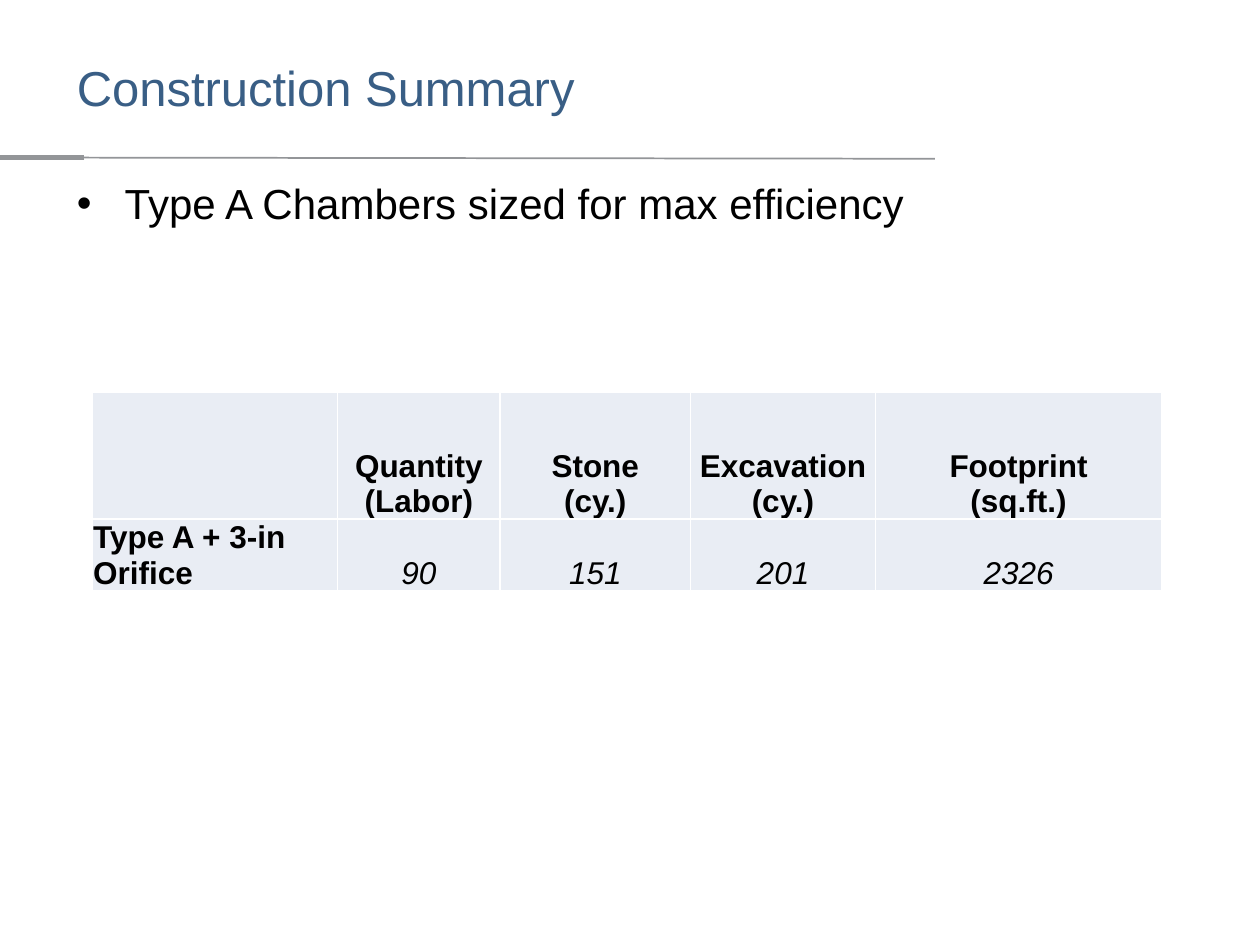
from dataclasses import dataclass

from lxml import etree
from pptx import Presentation
from pptx.dml.color import RGBColor
from pptx.enum.shapes import MSO_CONNECTOR
from pptx.enum.text import MSO_ANCHOR, MSO_AUTO_SIZE, PP_ALIGN
from pptx.oxml.ns import qn
from pptx.util import Inches, Pt

STRAIGHT = MSO_CONNECTOR.STRAIGHT
MIDDLE, BOTTOM = MSO_ANCHOR.MIDDLE, MSO_ANCHOR.BOTTOM
LEFT, CENTER = PP_ALIGN.LEFT, PP_ALIGN.CENTER
NO_AUTOFIT = MSO_AUTO_SIZE.NONE


@dataclass(frozen=True)
class Theme:
    font: str = "Arial"
    title_color: str = "395E85"
    text_color: str = "000000"
    rule_color: str = "939598"
    cell_fill: str = "E9EDF4"
    border_color: str = "FFFFFF"
    title_size: int = 28
    body_size: int = 24
    table_size: int = 18


THEME = Theme()

CHAMBER = "Type A"
COLUMN_WIDTHS = [1.95, 1.29, 1.51, 1.47, 2.27]
ROW_HEIGHTS = [1.01, 0.54]
# Each cell is a list of paragraphs
TABLE_ROWS = [
    [[], ["Quantity", "(Labor)"], ["Stone", "(cy.)"], ["Excavation (cy.)"],
     ["Footprint", "(sq.ft.)"]],
    [[f"{CHAMBER} + 3-in Orifice"], ["90"], ["151"], ["201"], ["2326"]],
]


def add_run(paragraph, text, size, color, bold=False, italic=False):
    run = paragraph.add_run()
    run.text = text
    font = run.font
    font.name, font.size = THEME.font, Pt(size)
    font.bold, font.italic = bold, italic
    font.color.rgb = RGBColor.from_string(color)


def place(shape, left, top, width, height):
    shape.left, shape.top = Inches(left), Inches(top)
    shape.width, shape.height = Inches(width), Inches(height)


def add_rule(slide, left, top, width, drop, weight):
    """Draw a rule from its right end back to the left edge."""
    rule = slide.shapes.add_connector(
        STRAIGHT, Inches(left + width), Inches(top + drop), Inches(left), Inches(top))
    rule.line.color.rgb = RGBColor.from_string(THEME.rule_color)
    rule.line.width = Pt(weight)
    etree.SubElement(rule._element.spPr, qn("a:effectLst"))


def fill_title(slide, left, top, width, height):
    title = slide.shapes.title
    place(title, left, top, width, height)
    frame = title.text_frame
    frame.auto_size, frame.vertical_anchor = NO_AUTOFIT, MIDDLE
    paragraph = frame.paragraphs[0]
    paragraph.alignment = LEFT
    add_run(paragraph, "Construction Summary", THEME.title_size, THEME.title_color)


def fill_body(slide, left, top, width, height):
    body = slide.placeholders[1]
    place(body, left, top, width, height)
    body.text_frame.auto_size = NO_AUTOFIT
    paragraph = body.text_frame.paragraphs[0]
    paragraph.space_before = Pt(0)
    properties = paragraph._p.get_or_add_pPr()
    properties.set("marL", str(Inches(0.38)))
    properties.set("indent", str(Inches(-0.38)))
    etree.SubElement(properties, qn("a:buFont"), typeface=THEME.font)
    etree.SubElement(properties, qn("a:buChar"), char="•")
    add_run(paragraph, f"{CHAMBER} Chambers sized for max efficiency",
            THEME.body_size, THEME.text_color)


def style_cell(cell):
    properties = cell._tc.get_or_add_tcPr()
    for side in ("lnL", "lnR", "lnT", "lnB"):
        border = etree.SubElement(properties, qn(f"a:{side}"), w=str(Pt(1)))
        border_fill = etree.SubElement(border, qn("a:solidFill"))
        etree.SubElement(border_fill, qn("a:srgbClr"), val=THEME.border_color)
    cell.fill.solid()
    cell.fill.fore_color.rgb = RGBColor.from_string(THEME.cell_fill)
    cell.vertical_anchor = BOTTOM
    cell.margin_left = cell.margin_right = cell.margin_top = Inches(0.01)
    cell.margin_bottom = 0


def add_summary_table(slide, left, top, width, height):
    table = slide.shapes.add_table(
        len(ROW_HEIGHTS), len(COLUMN_WIDTHS),
        Inches(left), Inches(top), Inches(width), Inches(height)).table
    table.first_row = table.horz_banding = False
    for column, column_width in zip(table.columns, COLUMN_WIDTHS):
        column.width = Inches(column_width)
    for row, row_height in zip(table.rows, ROW_HEIGHTS):
        row.height = Inches(row_height)

    for row_index, row_cells in enumerate(TABLE_ROWS):
        for column_index, lines in enumerate(row_cells):
            cell = table.cell(row_index, column_index)
            style_cell(cell)
            is_label = row_index == 0 or column_index == 0
            frame = cell.text_frame
            for line_index, line in enumerate(lines):
                paragraph = frame.add_paragraph() if line_index else frame.paragraphs[0]
                paragraph.alignment = CENTER if column_index else LEFT
                add_run(paragraph, line, THEME.table_size, THEME.text_color,
                        bold=is_label, italic=not is_label)


def main():
    presentation = Presentation()
    presentation.slide_width, presentation.slide_height = Inches(10), Inches(7.5)
    slide = presentation.slides.add_slide(presentation.slide_layouts[1])

    # Heading with its thin and thick rules
    add_rule(slide, 0, 1.25, 7.42, 0.01, weight=1)
    add_rule(slide, 0, 1.25, 0.67, 0, weight=3)
    fill_title(slide, 0.51, 0.13, 7.35, 1.12)

    # Bullet and summary table
    fill_body(slide, 0.51, 1.36, 8.91, 5.52)
    add_summary_table(slide, 0.73, 3.11, sum(COLUMN_WIDTHS), sum(ROW_HEIGHTS))

    presentation.save("out.pptx")


if __name__ == "__main__":
    main()
